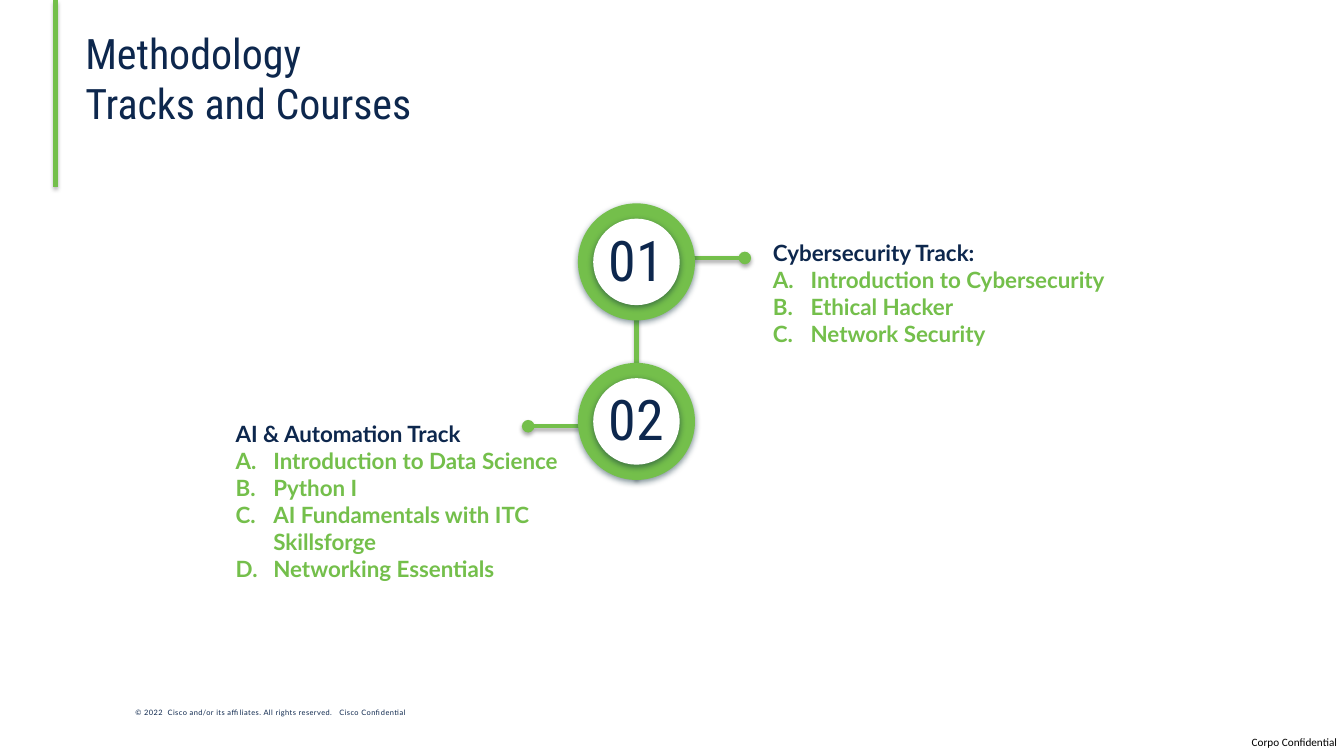
from lxml import etree
from pptx import Presentation
from pptx.dml.color import RGBColor
from pptx.enum.shapes import MSO_CONNECTOR, MSO_SHAPE
from pptx.enum.text import MSO_ANCHOR, PP_ALIGN
from pptx.oxml.ns import qn
from pptx.util import Cm, Pt

LINE, OVAL = MSO_CONNECTOR.STRAIGHT, MSO_SHAPE.OVAL
TOP, MID, LOW = MSO_ANCHOR.TOP, MSO_ANCHOR.MIDDLE, MSO_ANCHOR.BOTTOM
LEFT, CENTER, RIGHT = PP_ALIGN.LEFT, PP_ALIGN.CENTER, PP_ALIGN.RIGHT
NAVY, GREEN, WHITE, BLACK = "0D274D", "74BF4B", "FFFFFF", "000000"
HEAD, BODY = "Roboto Condensed", "Lato"

# Content, lengths in cm
TITLE = "Methodology\vTracks and Courses"
LEGAL = "© 2022  Cisco and/or its affiliates. All rights reserved.   Cisco Confidential"
MARK = "Corpo Confidential"
TRACKS = [
    {"num": "01", "side": 1, "arm": 6.5, "box": (19.15, 3.93, 10.08, 6.91),
     "name": "Cybersecurity Track:",
     "items": ["Introduction to Cybersecurity", "Ethical Hacker",
               "Network Security"]},
    {"num": "02", "side": -1, "arm": 10.74, "box": (5.61, 10.11, 9.3, 5.03),
     "name": "AI & Automation Track",
     "items": ["Introduction to Data Science", "Python I",
               "AI Fundamentals with ITC Skillsforge", "Networking Essentials"]},
]
MID_X, FIRST_Y, STEP = 16.04, 6.6, 4.02
RING, DISC, ARM = 2.95, 2.18, 1.3
INDENT = Cm(0.95)

prs = Presentation()
prs.slide_width, prs.slide_height = Cm(33.87), Cm(19.05)
slide = prs.slides.add_slide(prs.slide_layouts[6])
shapes = slide.shapes


def color(code):
    return RGBColor.from_string(code)


def shade(shape, code, alpha, blur, dist):
    fx = etree.SubElement(shape._element.spPr, qn("a:effectLst"))
    cast = etree.SubElement(fx, qn("a:outerShdw"), blurRad=str(Pt(blur)),
                            dist=str(Pt(dist)), dir="5400000", rotWithShape="0")
    tint = etree.SubElement(cast, qn("a:srgbClr"), val=code)
    etree.SubElement(tint, qn("a:alpha"), val=str(alpha * 1000))


def draw_line(x1, y1, x2, y2, dot=False):
    line = shapes.add_connector(LINE, Cm(x1), Cm(y1), Cm(x2), Cm(y2))
    line.line.color.rgb = color(GREEN)
    line.line.width = Pt(3)
    if dot:
        etree.SubElement(line.line._get_or_add_ln(), qn("a:tailEnd"), type="oval")
    shade(line, BLACK, 35, 3.1, 1.8)


def draw_disc(x, y, size, code):
    disc = shapes.add_shape(OVAL, Cm(x - size / 2), Cm(y - size / 2),
                            Cm(size), Cm(size))
    disc.fill.solid()
    disc.fill.fore_color.rgb = color(code)
    disc.line.fill.background()
    shade(disc, "0C2E3A", 50, 4.5, 1.5)


def style(para, font, size, code, bold=False):
    for run in para.runs:
        run.font.name, run.font.size, run.font.bold = font, Pt(size), bold
        run.font.color.rgb = color(code)


def add_text(box, text, font, size, code, anchor=MID, align=LEFT,
             pad=(0.33, 0.33)):
    frame = shapes.add_textbox(*map(Cm, box)).text_frame
    frame.word_wrap, frame.vertical_anchor = True, anchor
    frame.margin_left = frame.margin_right = Cm(pad[0])
    frame.margin_top = frame.margin_bottom = Cm(pad[1])
    frame.text = text
    for para in frame.paragraphs:
        para.alignment = align
        style(para, font, size, code)
    return frame


def number(para):
    props = para._p.get_or_add_pPr()
    props.set("marL", str(INDENT))
    props.set("indent", str(-INDENT))
    etree.SubElement(props, qn("a:buFont"), typeface="+mj-lt")
    etree.SubElement(props, qn("a:buAutoNum"), type="alphaUcPeriod")


# Footer and title
legal = add_text((3.18, 17.7, 12.6, 0.46), LEGAL, BODY, 5.3, NAVY, LOW,
                 pad=(0.23, 0.1))
legal.paragraphs[0].runs[0].font._element.set("spc", "30")
add_text((29.7, 18.54, 4, 0.33), MARK, "Calibri", 8, BLACK, TOP, RIGHT, (0, 0))
add_text((1.82, 1.78, 28.42, 1.78), TITLE, HEAD, 30, NAVY, LOW)
draw_line(1.4, 0, 1.4, 4.7)

# Stem behind the rings
draw_line(MID_X, 6.45, MID_X, 12.07)

# Tracks: arm, ring, number and course list
for i, track in enumerate(TRACKS):
    y = FIRST_Y + i * STEP
    start = MID_X + track["side"] * 1.43
    draw_line(start, track["arm"], start + track["side"] * ARM, track["arm"], True)
    draw_disc(MID_X, y, RING, GREEN)
    draw_disc(MID_X, y, DISC, WHITE)
    add_text((MID_X - 1.17, y - 1.35, 2.34, 2.54), track["num"], HEAD, 40, NAVY,
             align=CENTER)
    lines = [track["name"]] + track["items"]
    frame = add_text(track["box"], "\n".join(lines), BODY, 16, GREEN)
    style(frame.paragraphs[0], BODY, 16, NAVY, True)
    for para in frame.paragraphs[1:]:
        number(para)
        style(para, BODY, 16, GREEN, True)

prs.save("out.pptx")
